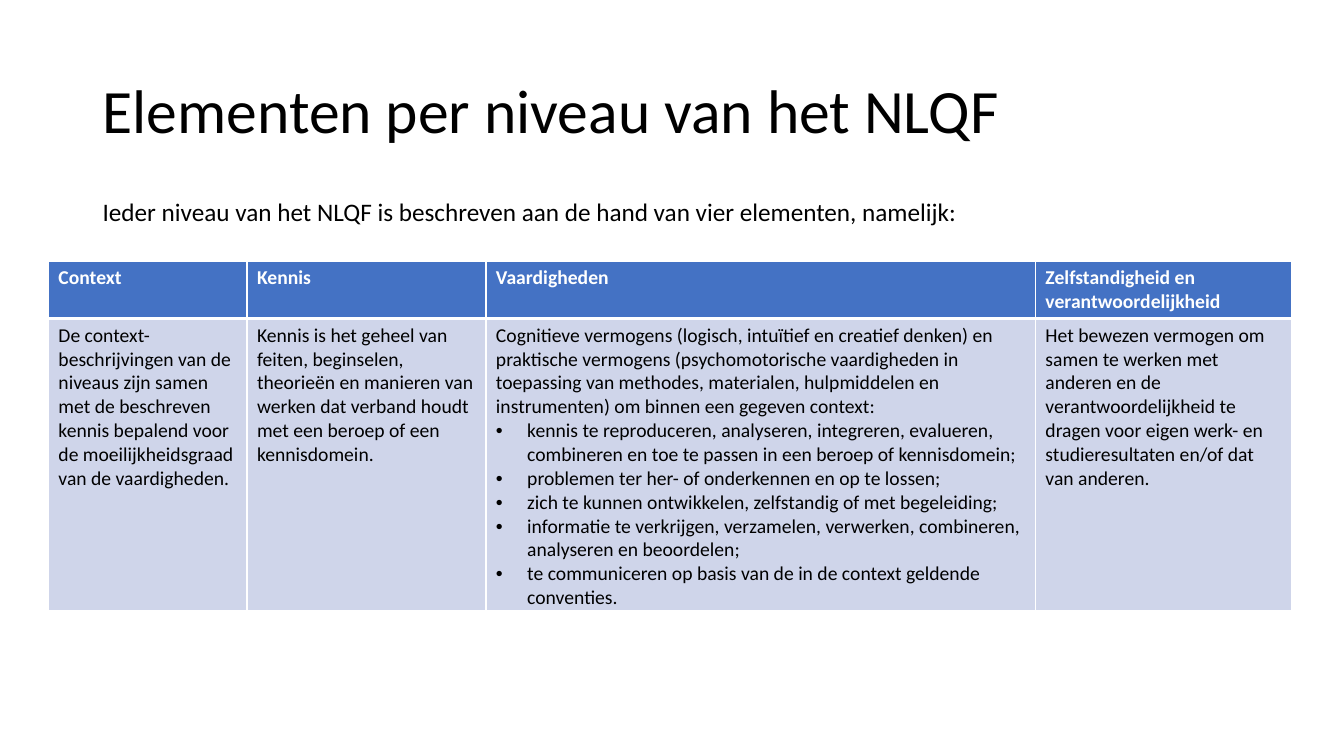
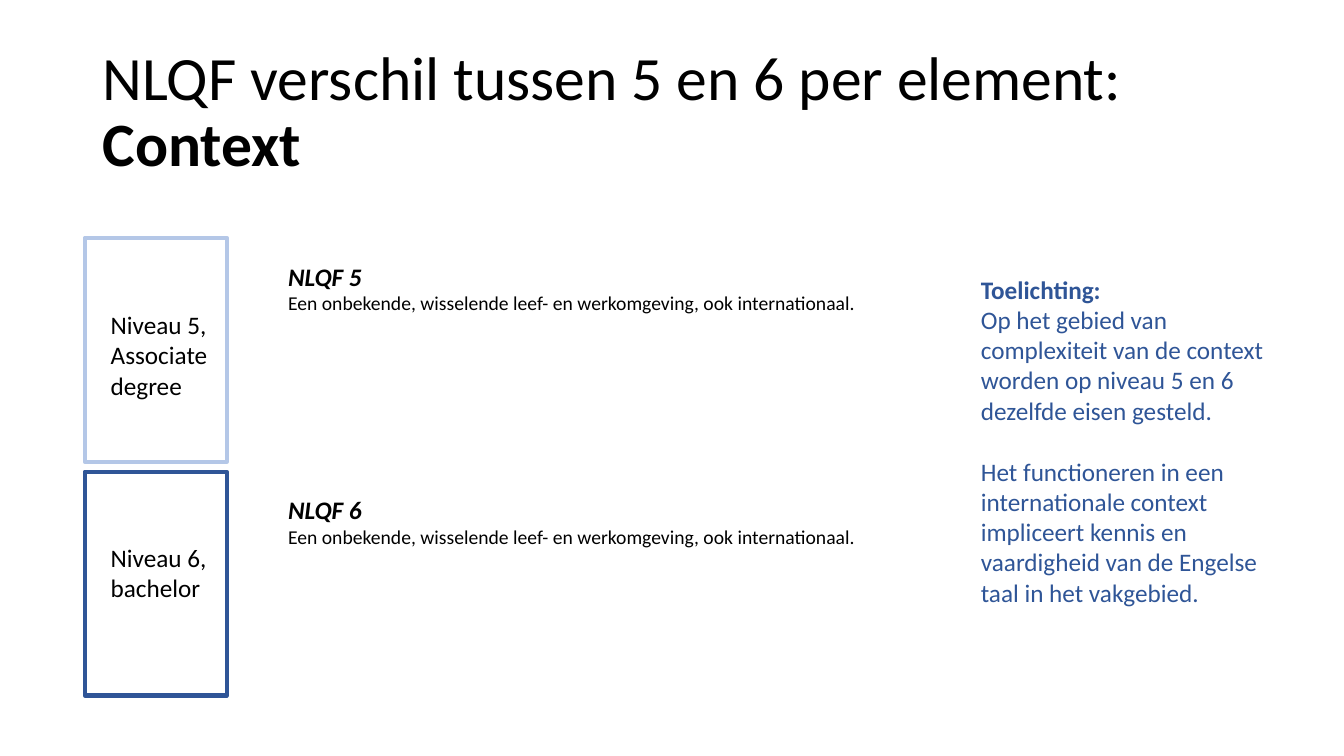
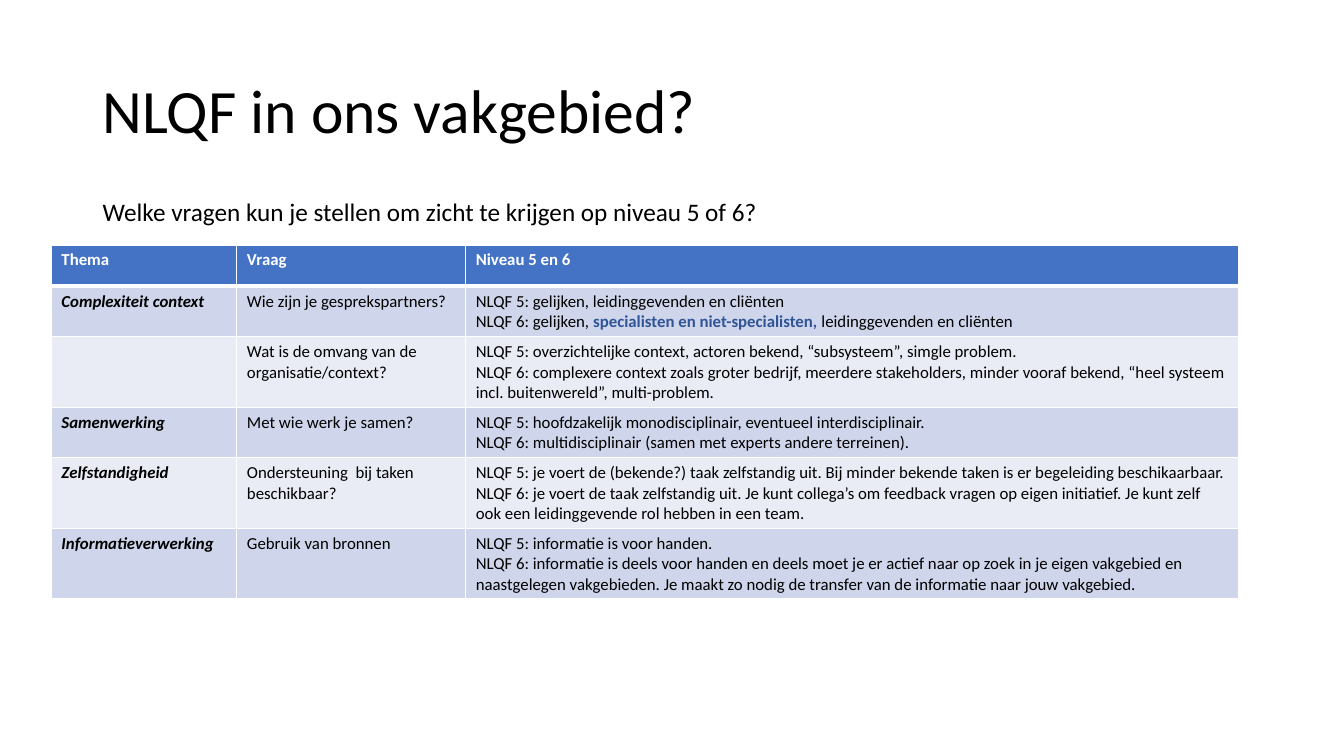
from lxml import etree
from pptx import Presentation
from pptx import util as u
from pptx.dml.color import RGBColor
from pptx.enum import shapes, text
from pptx.oxml.ns import qn

PX = 9144
FONT = "Calibri"
BLACK, WHITE = "000000", "FFFFFF"
HEADER, BAND_DARK, BAND_LIGHT = "4472C4", "CFD5EA", "E9EBF5"
ACCENT, PALE = "2F5597", "B4C7E7"
INDENT = 31


def rgb(value):
    return RGBColor.from_string(value)


def write(frame, lines, size, color=BLACK, spacing=None):
    frame.word_wrap = True
    for number, spans in enumerate(lines):
        para = frame.paragraphs[0] if number == 0 else frame.add_paragraph()
        if spacing:
            para.line_spacing = spacing
        for words, style in spans:
            if "gap" in style:
                para.space_before = u.Pt(22)
            if "bullet" in style:
                props = para._p.get_or_add_pPr()
                props.set("marL", str(INDENT * PX))
                props.set("indent", str(-INDENT * PX))
                etree.SubElement(props, qn("a:buFont")).set("typeface", "Arial")
                etree.SubElement(props, qn("a:buChar")).set("char", "•")
            span = para.add_run()
            span.text = words
            span.font.name = FONT
            span.font.size = u.Pt(size)
            span.font.bold = "bold" in style
            span.font.italic = "italic" in style
            span.font.color.rgb = rgb(ACCENT if "accent" in style else color)


deck = Presentation()
deck.slide_width, deck.slide_height = 1333 * PX, 750 * PX

titles = [
    [[("Elementen per niveau van het NLQF", "")]],
    [[("NLQF verschil tussen 5 en 6 per element:", "")], [("Context", "bold")]],
    [[("NLQF in ons vakgebied?", "")]],
]
pages = []
for lines in titles:
    page = deck.slides.add_slide(deck.slide_layouts[6])
    box = page.shapes.add_textbox(92 * PX, 40 * PX, 1150 * PX, 145 * PX)
    box.text_frame.vertical_anchor = text.MSO_ANCHOR.MIDDLE
    write(box.text_frame, lines, 44, spacing=0.9)
    pages.append(page)
elements_page, context_page, questions_page = pages

intros = [
    (elements_page, "Ieder niveau van het NLQF is beschreven aan de hand van vier elementen, namelijk:"),
    (questions_page, "Welke vragen kun je stellen om zicht te krijgen op niveau 5 of 6?"),
]
for page, words in intros:
    box = page.shapes.add_textbox(92 * PX, 190 * PX, 1127 * PX, 40 * PX)
    write(box.text_frame, [[(words, "")]], 18)

levels = [
    ("5", PALE, 302, 101, ["Niveau 5,", "Associate degree"]),
    ("6", ACCENT, 533, 71, ["Niveau 6,", "bachelor"]),
]
for number, (level, color, label_top, label_height, label) in enumerate(levels):
    offset = number * 232
    frame = context_page.shapes.add_shape(
        shapes.MSO_SHAPE.RECTANGLE, 84 * PX, (236 + offset) * PX, 141 * PX, 222 * PX)
    frame.shadow.inherit = False
    frame.fill.background()
    frame.line.color.rgb = rgb(color)
    frame.line.width = u.Pt(3)
    box = context_page.shapes.add_textbox(100 * PX, label_top * PX, 160 * PX, label_height * PX)
    write(box.text_frame, [[(words, "")] for words in label], 18)
    box = context_page.shapes.add_textbox(276 * PX, (254 + offset) * PX, 660 * PX, 64 * PX)
    write(box.text_frame, [[("NLQF " + level, "bold italic")]], 18)
    para = box.text_frame.add_paragraph()
    span = para.add_run()
    span.text = "Een onbekende, wisselende leef- en werkomgeving, ook internationaal."
    span.font.name = FONT
    span.font.size = u.Pt(14)
    span.font.color.rgb = rgb(BLACK)

box = context_page.shapes.add_textbox(963 * PX, 267 * PX, 321 * PX, 343 * PX)
write(box.text_frame, [
    [("Toelichting:", "bold")],
    [("Op het gebied van complexiteit van de context worden op niveau 5 en 6 dezelfde eisen gesteld.", "")],
    [("Het functioneren in een internationale context impliceert kennis en vaardigheid van de Engelse taal in het vakgebied.", "gap")],
], 18, ACCENT)

element_rows = [
    [[[(words, "bold")]] for words in
     ("Context", "Kennis", "Vaardigheden", "Zelfstandigheid en verantwoordelijkheid")],
    [
        [[("De context-beschrijvingen van de niveaus zijn samen met de beschreven kennis bepalend voor de moeilijkheidsgraad van de vaardigheden.", "")]],
        [[("Kennis is het geheel van feiten, beginselen, theorieën en manieren van werken dat verband houdt met een beroep of een kennisdomein.", "")]],
        [
            [("Cognitieve vermogens (logisch, intuïtief en creatief denken) en praktische vermogens (psychomotorische vaardigheden in toepassing van methodes, materialen, hulpmiddelen en instrumenten) om binnen een gegeven context:", "")],
            [("kennis te reproduceren, analyseren, integreren, evalueren, combineren en toe te passen in een beroep of kennisdomein;", "bullet")],
            [("problemen ter her- of onderkennen en op te lossen;", "bullet")],
            [("zich te kunnen ontwikkelen, zelfstandig of met begeleiding;", "bullet")],
            [("informatie te verkrijgen, verzamelen, verwerken, combineren, analyseren en beoordelen;", "bullet")],
            [("te communiceren op basis van de in de context geldende conventies.", "bullet")],
        ],
        [[("Het bewezen vermogen om samen te werken met anderen en de verantwoordelijkheid te dragen voor eigen werk- en studieresultaten en/of dat van anderen.", "")]],
    ],
]

questions = [
    ("Complexiteit context", "Wie zijn je gesprekspartners?", [
        [("NLQF 5: gelijken, leidinggevenden en cliënten", "")],
        [("NLQF 6: gelijken, ", ""), ("specialisten en niet-specialisten, ", "bold accent"),
         ("leidinggevenden en cliënten", "")]]),
    ("", "Wat is de omvang van de organisatie/context?", [
        [("NLQF 5: overzichtelijke context, actoren bekend, “subsysteem”, simgle problem.", "")],
        [("NLQF 6: complexere context zoals groter bedrijf, meerdere stakeholders, minder vooraf bekend, “heel systeem incl. buitenwereld”, multi-problem.", "")]]),
    ("Samenwerking", "Met wie werk je samen?", [
        [("NLQF 5: hoofdzakelijk monodisciplinair, eventueel interdisciplinair.", "")],
        [("NLQF 6: multidisciplinair (samen met experts andere terreinen).", "")]]),
    ("Zelfstandigheid", "Ondersteuning  bij taken beschikbaar?", [
        [("NLQF 5: je voert de (bekende?) taak zelfstandig uit. Bij minder bekende taken is er begeleiding beschikaarbaar.", "")],
        [("NLQF 6: je voert de taak zelfstandig uit. Je kunt collega’s om feedback vragen op eigen initiatief. Je kunt zelf ook een leidinggevende rol hebben in een team.", "")]]),
    ("Informatieverwerking", "Gebruik van bronnen", [
        [("NLQF 5: informatie is voor handen.", "")],
        [("NLQF 6: informatie is deels voor handen en deels moet je er actief naar op zoek in je eigen vakgebied en naastgelegen vakgebieden. Je maakt zo nodig de transfer van de informatie naar jouw vakgebied.", "")]]),
]
question_rows = [[[[(words, "bold")]] for words in ("Thema", "Vraag", "Niveau 5 en 6")]]
for theme, question, answer in questions:
    question_rows.append([[[(theme, "bold italic")]], [[(question, "")]], answer])

tables = [
    (elements_page, 48, 259, [197, 237, 545, 254], [57, 290], 14, element_rows),
    (questions_page, 51, 243, [184, 227, 767], [41, 50, 70, 50, 70, 70], 12, question_rows),
]
for page, left, top, widths, heights, size, rows in tables:
    table = page.shapes.add_table(
        len(rows), len(widths), left * PX, top * PX, sum(widths) * PX, sum(heights) * PX).table
    for column, width in zip(table.columns, widths):
        column.width = width * PX
    for row, cells in enumerate(rows):
        table.rows[row].height = heights[row] * PX
        fill = BAND_DARK if row % 2 else BAND_LIGHT
        if row == 0:
            fill = HEADER
        for column, lines in enumerate(cells):
            cell = table.cell(row, column)
            props = cell._tc.get_or_add_tcPr()
            for side in ("lnL", "lnR", "lnT", "lnB"):
                thick = (row, side) in ((0, "lnB"), (1, "lnT"))
                border = etree.SubElement(props, qn("a:" + side))
                border.set("w", str(u.Pt(3 if thick else 1)))
                solid = etree.SubElement(border, qn("a:solidFill"))
                etree.SubElement(solid, qn("a:srgbClr")).set("val", WHITE)
            cell.fill.solid()
            cell.fill.fore_color.rgb = rgb(fill)
            write(cell.text_frame, lines, size, BLACK if row else WHITE)

deck.save("out.pptx")
